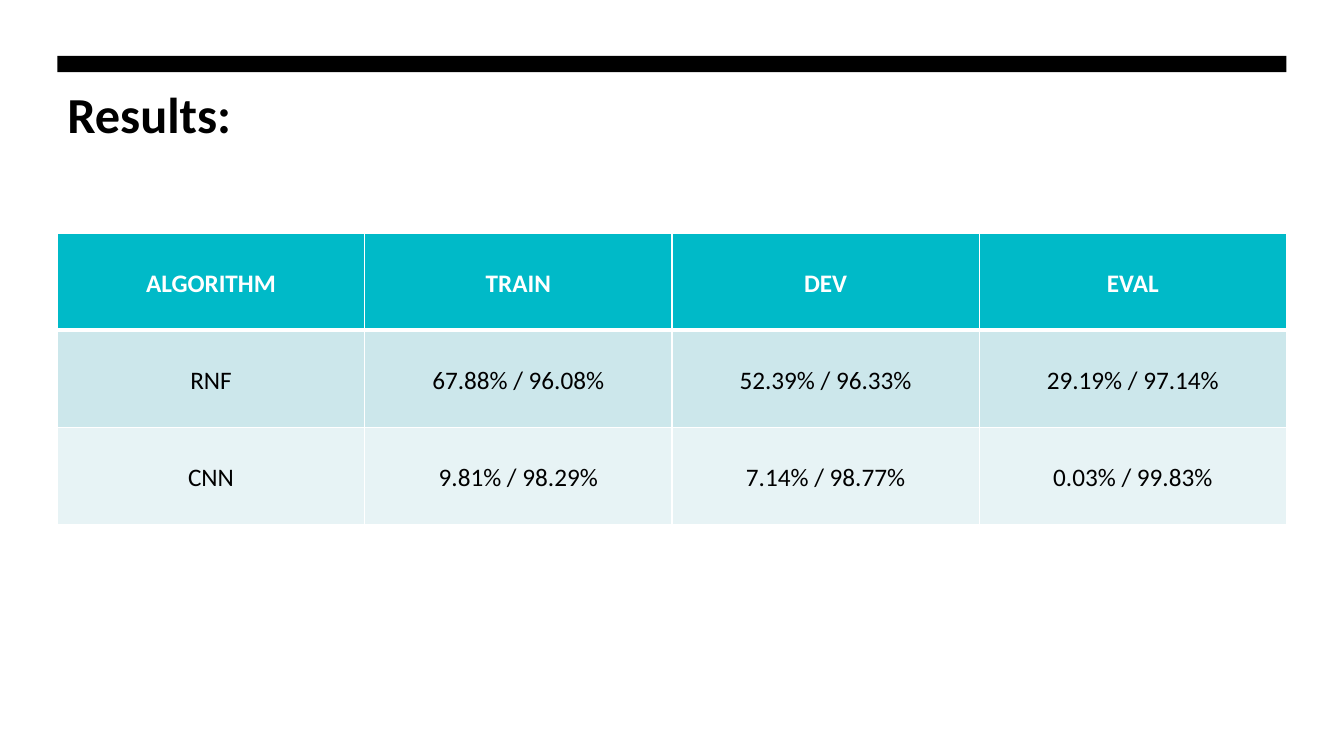
import pptx
import pptx.util
import pptx.dml.color
import pptx.enum.shapes
import pptx.enum.text
import pptx.oxml
import pptx.oxml.ns

Pt = pptx.util.Pt
FONT = "Calibri"
BLACK, WHITE, TEAL = "000000", "FFFFFF", "00BAC8"
BODY_FILLS = ["CCE7EB", "E7F3F5"]
LEFT, WIDTH = 41, 878
RESULTS = [
    ["ALGORITHM", "TRAIN", "DEV", "EVAL"],
    ["RNF", "67.88% / 96.08%", "52.39% / 96.33%", "29.19% / 97.14%"],
    ["CNN", "9.81% / 98.29%", "7.14% / 98.77%", "0.03% / 99.83%"],
]


def color(value):
    return pptx.dml.color.RGBColor.from_string(value)


def write(frame, text, size, fill=BLACK, bold=False, align=None, spacing=None):
    frame.word_wrap = True
    para = frame.paragraphs[0]
    para.alignment = align
    para.line_spacing = spacing
    span = para.add_run()
    span.text = text
    span.font.name = FONT
    span.font.size = Pt(size)
    span.font.bold = bold
    span.font.color.rgb = color(fill)


def add_bar(page, left, top, width, height):
    bar = page.shapes.add_shape(pptx.enum.shapes.MSO_SHAPE.RECTANGLE,
                                Pt(left), Pt(top), Pt(width), Pt(height))
    bar.shadow.inherit = False
    bar.fill.solid()
    bar.fill.fore_color.rgb = color(BLACK)
    bar.line.fill.background()


def add_title(page, text, left, top, width, height):
    box = page.shapes.add_textbox(Pt(left), Pt(top), Pt(width), Pt(height))
    write(box.text_frame, text, 36, bold=True)


def set_borders(cell, top, bottom):
    """Draw white cell edges; side edges are 1 point wide."""
    properties = cell._tc.get_or_add_tcPr()
    for side, width in (("L", 1), ("R", 1), ("T", top), ("B", bottom)):
        properties.append(pptx.oxml.parse_xml(
            f'<a:ln{side} {pptx.oxml.ns.nsdecls("a")} w="{Pt(width)}">'
            f'<a:solidFill><a:srgbClr val="{WHITE}"/></a:solidFill></a:ln{side}>'))


def add_results(page, rows, left, top, width, height):
    table = page.shapes.add_table(len(rows), len(rows[0]), Pt(left), Pt(top),
                                  Pt(width), Pt(height)).table
    for column in table.columns:
        column.width = Pt(width / len(rows[0]))
    for row_index, values in enumerate(rows):
        table.rows[row_index].height = Pt(height / len(rows))
        header = row_index == 0
        for column_index, value in enumerate(values):
            cell = table.cell(row_index, column_index)
            set_borders(cell, top=3 if row_index == 1 else 1, bottom=3 if header else 1)
            cell.fill.solid()
            cell.fill.fore_color.rgb = color(TEAL if header else BODY_FILLS[(row_index - 1) % 2])
            write(cell.text_frame, value, 18, fill=WHITE if header else BLACK, bold=header,
                  align=pptx.enum.text.PP_ALIGN.CENTER, spacing=2.0)


def main():
    deck = pptx.Presentation()
    deck.slide_width, deck.slide_height = Pt(960), Pt(540)
    page = deck.slides.add_slide(deck.slide_layouts[6])
    add_bar(page, LEFT, 40, WIDTH, 11.5)
    add_title(page, "Results:", LEFT, 55.5, WIDTH, 70.5)
    add_results(page, RESULTS, LEFT, 166.5, WIDTH, 208)
    deck.save("out.pptx")


if __name__ == "__main__":
    main()
